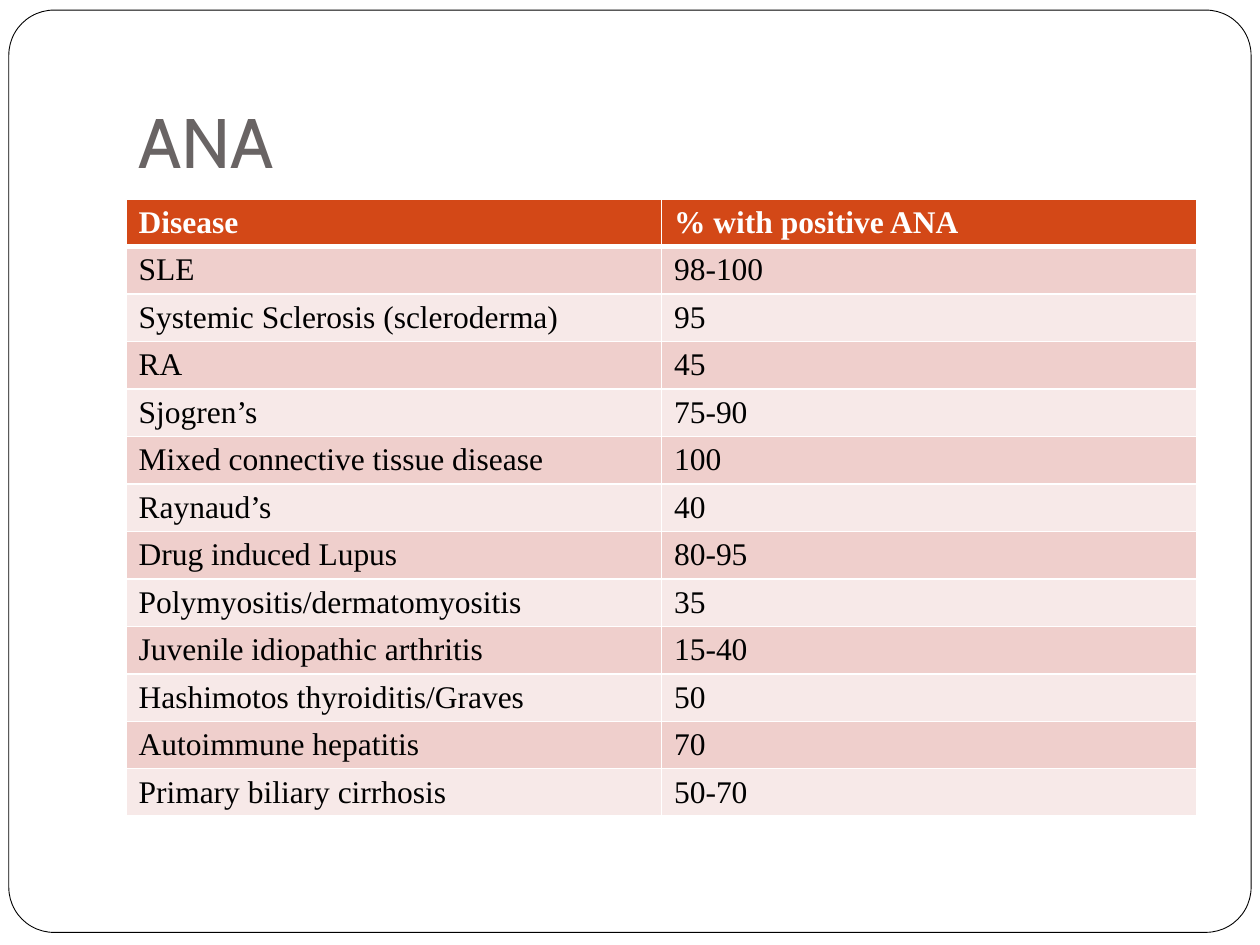
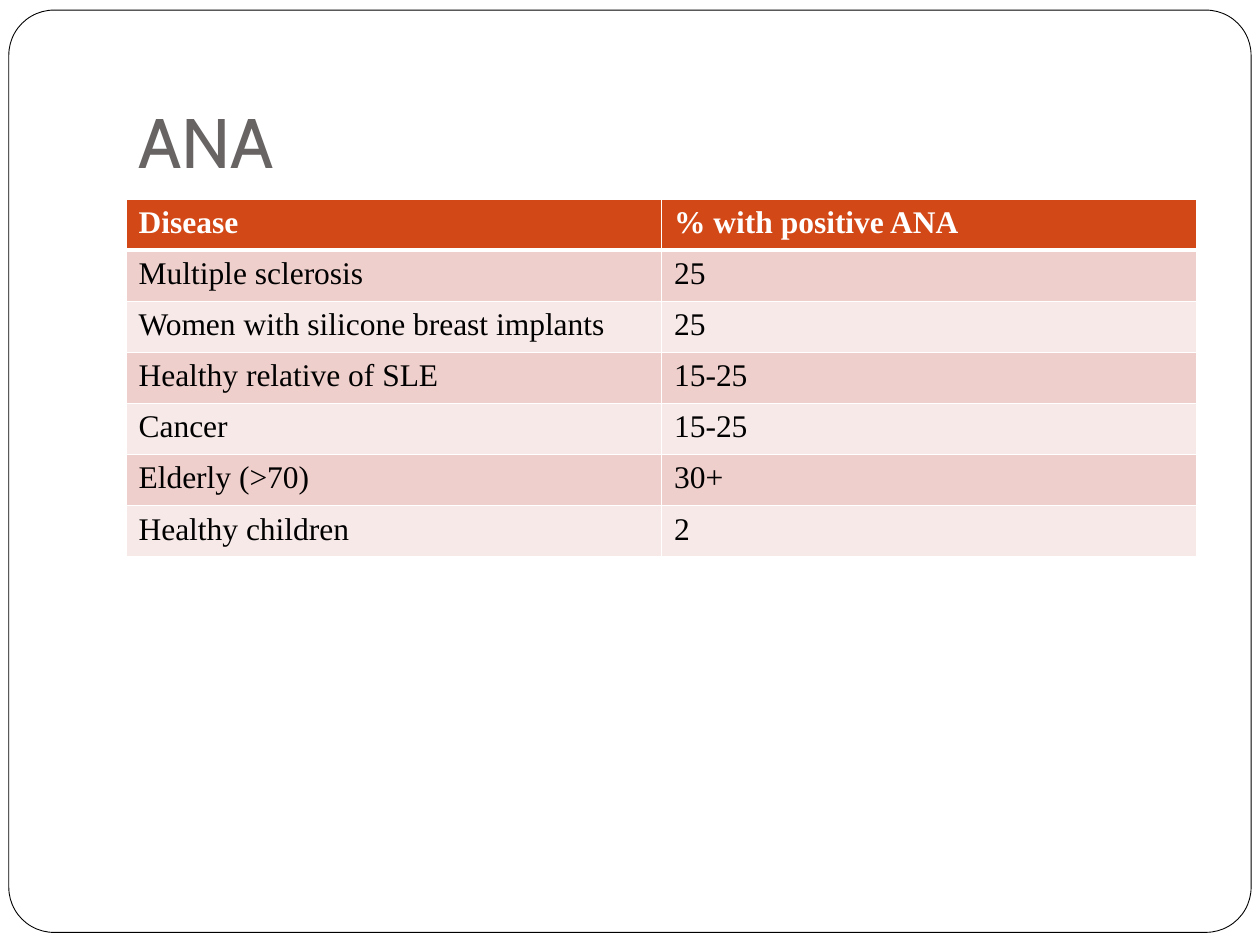
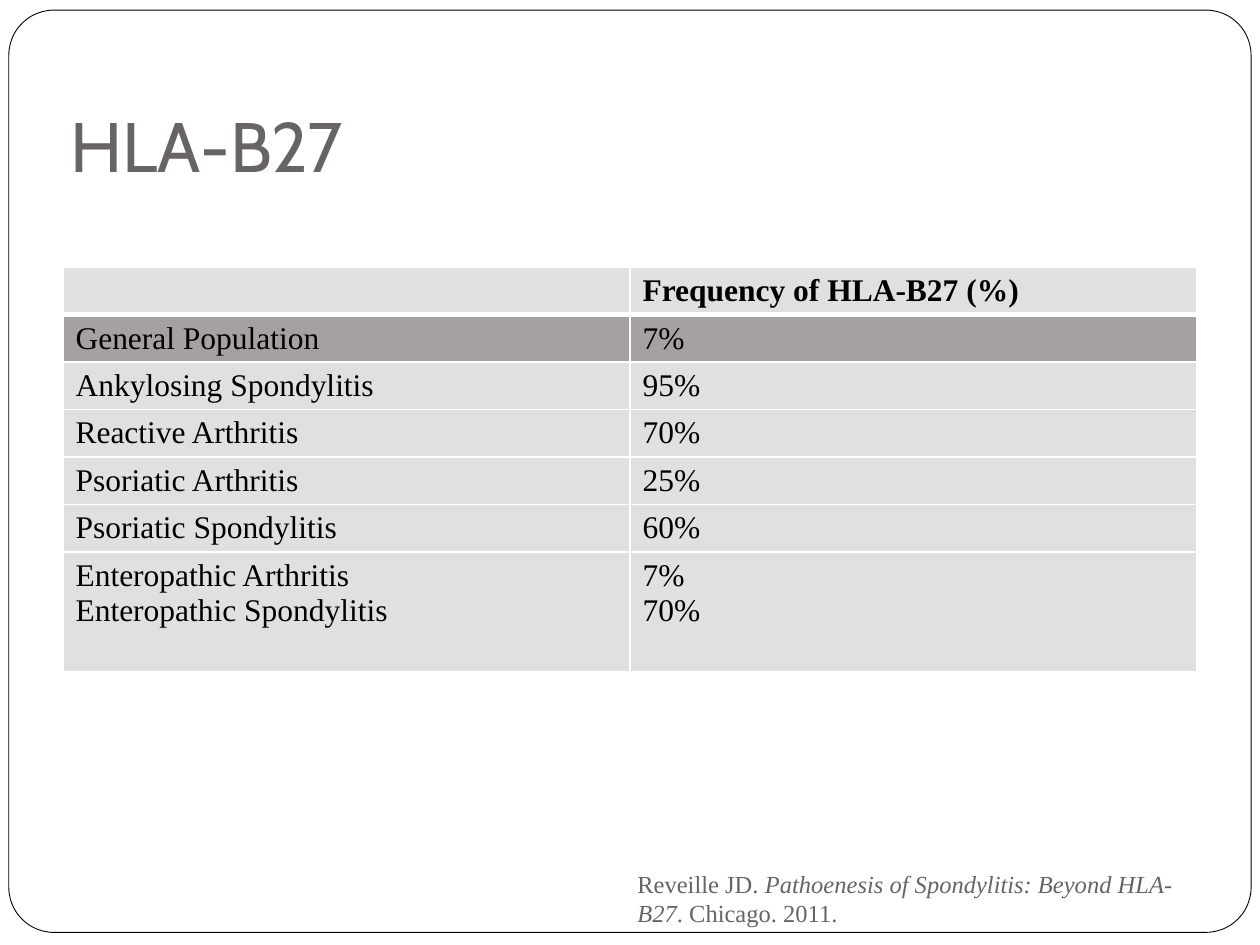
"""Build three slides of antibody and HLA-B27 frequency tables."""
from lxml import etree
from pptx import Presentation
from pptx import util as u
from pptx.dml.color import RGBColor
from pptx.enum import shapes, text
from pptx.oxml import ns

COLORS = {
    "white": "FFFFFF", "black": "000000", "grey": "696464", "orange": "D34817",
    "rose": "EFCFCC", "pale rose": "F7E9E8", "light grey": "E1E0E0", "mid grey": "A6A1A1",
}
TITLE_FONT, BODY_FONT = "Cabin", "Times New Roman"
ROSE_BANDS = ["orange"] + ["rose", "pale rose"] * 6
GREY_BANDS = ["light grey", "mid grey"] + ["light grey"] * 5
ANA_HEADER = ("Disease", "% with positive ANA")
TIGHT_ROW = 4.9 / 13
LOOSE_ROW = 2.84 / 7

SLIDES = [
    {
        "title": "ANA", "title_at": (1, 0.3, 8.5), "table_at": (1, 1.58, 8.5),
        "heights": [TIGHT_ROW] * 13, "bands": ROSE_BANDS, "header_color": "white",
        "rows": [
            ANA_HEADER,
            ("SLE", "98-100"),
            ("Systemic Sclerosis (scleroderma)", "95"),
            ("RA", "45"),
            ("Sjogren’s", "75-90"),
            ("Mixed connective tissue disease", "100"),
            ("Raynaud’s", "40"),
            ("Drug induced Lupus", "80-95"),
            ("Polymyositis/dermatomyositis", "35"),
            ("Juvenile idiopathic arthritis", "15-40"),
            ("Hashimotos thyroiditis/Graves", "50"),
            ("Autoimmune hepatitis", "70"),
            ("Primary biliary cirrhosis", "50-70"),
        ],
    },
    {
        "title": "ANA", "title_at": (1, 0.3, 8.5), "table_at": (1, 1.58, 8.5),
        "heights": [LOOSE_ROW] * 7, "bands": ROSE_BANDS, "header_color": "white",
        "rows": [
            ANA_HEADER,
            ("Multiple sclerosis", "25"),
            ("Women with silicone breast implants", "25"),
            ("Healthy relative of SLE", "15-25"),
            ("Cancer", "15-25"),
            ("Elderly (>70)", "30+"),
            ("Healthy children", "2"),
        ],
    },
    {
        "title": "HLA-B27", "title_at": (0.46, 0.33, 9), "table_at": (0.5, 2.12, 9),
        "heights": [TIGHT_ROW] * 6 + [0.95], "bands": GREY_BANDS, "header_color": "black",
        "rows": [
            ("", "Frequency of HLA-B27 (%)"),
            ("General Population", "7%"),
            ("Ankylosing Spondylitis", "95%"),
            ("Reactive Arthritis", "70%"),
            ("Psoriatic Arthritis", "25%"),
            ("Psoriatic Spondylitis", "60%"),
            ("Enteropathic Arthritis\nEnteropathic Spondylitis", "7%\n70%"),
        ],
    },
]


def add_span(para, words, size, font, color, bold=False, italic=False):
    span = para.add_run()
    span.text = words
    span.font.size = u.Pt(size)
    span.font.name = font
    span.font.bold = bold
    span.font.italic = italic
    span.font.color.rgb = RGBColor.from_string(COLORS[color])


def add_border(cell, side, points):
    properties = cell._tc.get_or_add_tcPr()
    line = etree.SubElement(properties, ns.qn("a:ln" + side), w=str(u.Pt(points)))
    fill = etree.SubElement(line, ns.qn("a:solidFill"))
    etree.SubElement(fill, ns.qn("a:srgbClr"), val=COLORS["white"])


deck = Presentation()
deck.slide_width, deck.slide_height = u.Inches(10), u.Inches(7.5)

for content in SLIDES:
    page = deck.slides.add_slide(deck.slide_layouts[6])

    frame = page.shapes.add_shape(
        shapes.MSO_SHAPE.ROUNDED_RECTANGLE,
        u.Inches(0.07), u.Inches(0.08), u.Inches(9.86), u.Inches(7.32))
    frame.adjustments[0] = 0.049
    frame.shadow.inherit = False
    frame.fill.solid()
    frame.fill.fore_color.rgb = RGBColor.from_string(COLORS["white"])
    frame.line.color.rgb = RGBColor.from_string(COLORS["black"])
    frame.line.width = u.Pt(0.5)

    left, top, width = content["title_at"]
    title = page.shapes.add_textbox(
        u.Inches(left), u.Inches(top), u.Inches(width), u.Inches(1.25)).text_frame
    title.word_wrap = True
    title.vertical_anchor = text.MSO_ANCHOR.BOTTOM
    title.margin_bottom = u.Inches(0.1)
    add_span(title.paragraphs[0], content["title"], 40, TITLE_FONT, "grey")

    left, top, width = content["table_at"]
    heights = content["heights"]
    table = page.shapes.add_table(
        len(heights), 2, u.Inches(left), u.Inches(top),
        u.Inches(width), u.Inches(sum(heights))).table
    table.horz_banding = False
    for row, height in zip(table.rows, heights):
        row.height = u.Inches(height)

    for row_number, entries in enumerate(content["rows"]):
        is_header = row_number == 0
        for column_number, entry in enumerate(entries):
            cell = table.cell(row_number, column_number)
            cell.margin_bottom = u.Inches(0.02)
            for side in "LRTB":
                under_header = (row_number, side) in [(0, "B"), (1, "T")]
                add_border(cell, side, 3 if under_header else 1)
            cell.fill.solid()
            cell.fill.fore_color.rgb = RGBColor.from_string(
                COLORS[content["bands"][row_number]])
            for line_number, words in enumerate(entry.split("\n") if entry else []):
                cell_text = cell.text_frame
                para = cell_text.add_paragraph() if line_number else cell_text.paragraphs[0]
                color = content["header_color"] if is_header else "black"
                add_span(para, words, 18, BODY_FONT, color, bold=is_header)

citation = page.shapes.add_textbox(
    u.Inches(4.96), u.Inches(6.92), u.Inches(4.62), u.Inches(0.42)).text_frame
citation.word_wrap = True
citation.vertical_anchor = text.MSO_ANCHOR.MIDDLE
for words, italic in [
    ("Reveille JD. ", False),
    ("Pathoenesis of Spondylitis: Beyond HLA-B27", True),
    (". Chicago. 2011.", False),
]:
    add_span(citation.paragraphs[0], words, 14, BODY_FONT, "grey", italic=italic)

deck.save("out.pptx")
